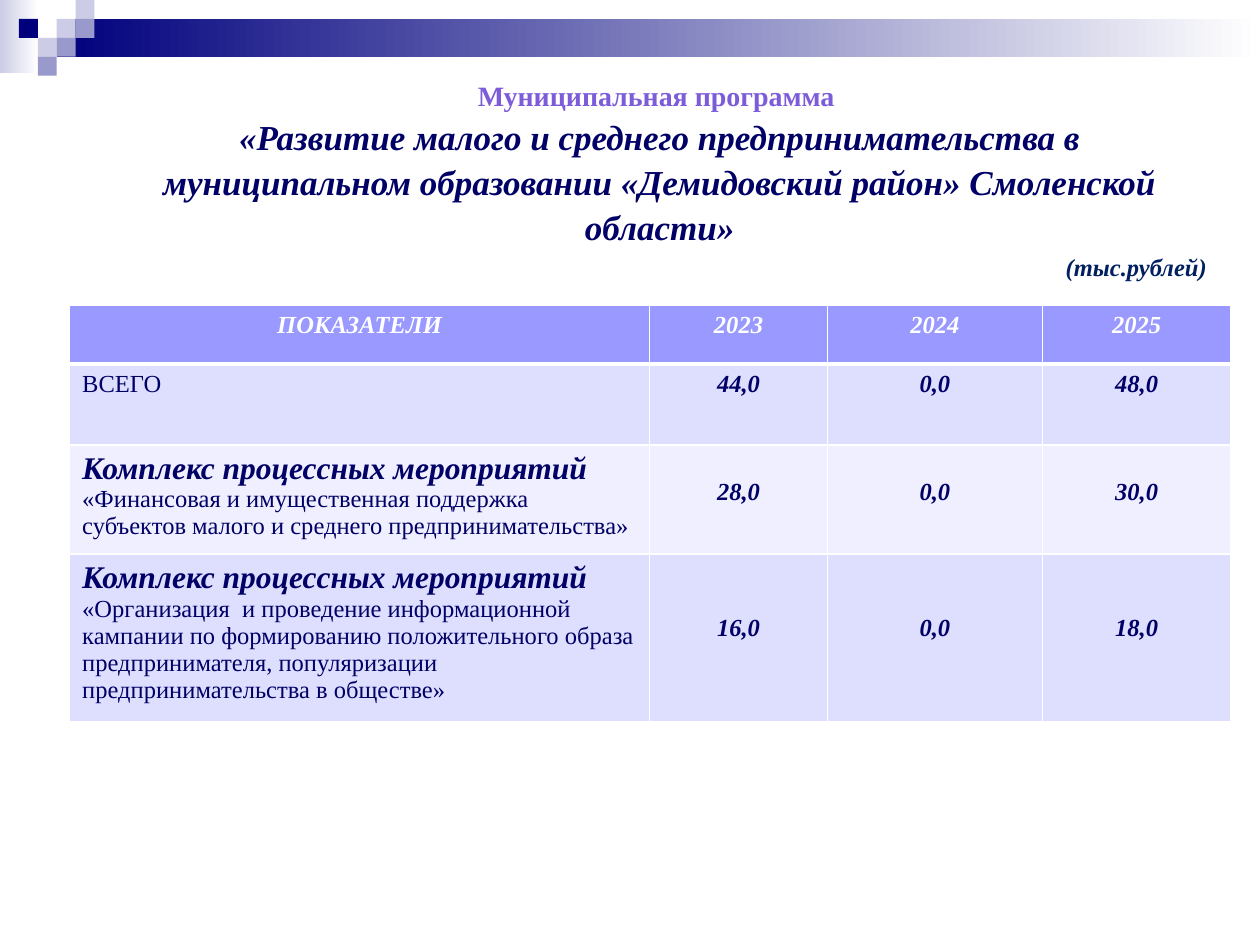
from lxml.etree import SubElement
from pptx import Presentation
from pptx.dml.color import RGBColor
from pptx.enum.shapes import MSO_SHAPE
from pptx.enum.text import MSO_ANCHOR, MSO_AUTO_SIZE, PP_ALIGN
from pptx.oxml.ns import qn
from pptx.util import Pt

COLORS = {
    "navy": "00007D", "lilac": "CCCCE6", "violet": "9999CC", "white": "FFFFFF",
    "program": "7D5CDA", "ink": "000066", "units": "002060",
    "header": "9999FF", "band": "DEDEFF", "pale": "EFEFFF",
}
FORMATS = {
    "program": {"size": Pt(16), "bold": True, "italic": False},
    "name": {"size": Pt(20), "bold": True, "italic": True},
    "strong": {"size": Pt(14), "bold": True, "italic": True},
    "measure": {"size": Pt(18), "bold": True, "italic": True},
    "plain": {"size": Pt(14), "bold": False, "italic": False},
}
STEP = 10.8
LINE = 15.5
MARGIN = 3.6


def rgb(color):
    return RGBColor.from_string(COLORS[color])


class ProgramSlide:
    font = "Times New Roman"

    def __init__(self, slide):
        self.slide = slide

    def run(self, paragraph, text, style, color):
        run = paragraph.add_run()
        run.text = text
        run.font.name = self.font
        run.font.color.rgb = rgb(color)
        for attribute, value in FORMATS[style].items():
            setattr(run.font, attribute, value)

    def block(self, left, top, width, height, *colors):
        block = self.slide.shapes.add_shape(
            MSO_SHAPE.RECTANGLE, Pt(left), Pt(top), Pt(width), Pt(height))
        block.shadow.inherit = False
        block.line.fill.background()
        if len(colors) == 1:
            block.fill.solid()
            block.fill.fore_color.rgb = rgb(colors[0])
            return
        block.fill.gradient()
        block.fill.gradient_angle = 0
        for stop, color in zip(block.fill.gradient_stops, colors):
            stop.color.rgb = rgb(color)

    def title(self, left, top, width, height, lines):
        title = self.slide.shapes.title
        title.left, title.top = Pt(left), Pt(top)
        title.width, title.height = Pt(width), Pt(height)
        frame = title.text_frame
        frame.word_wrap = True
        frame.auto_size = MSO_AUTO_SIZE.NONE
        frame.vertical_anchor = MSO_ANCHOR.TOP
        for index, line in enumerate(lines):
            paragraph = frame.add_paragraph() if index else frame.paragraphs[0]
            paragraph.alignment = PP_ALIGN.CENTER
            paragraph.line_spacing = 1.08
            paragraph.space_before = Pt(0)
            self.run(paragraph, *line)

    def label(self, left, top, width, height, text, style, color):
        label = self.slide.shapes.add_textbox(Pt(left), Pt(top), Pt(width), Pt(height))
        label.text_frame.word_wrap = False
        self.run(label.text_frame.paragraphs[0], text, style, color)

    def borders(self, cell, bottom):
        properties = cell._tc.get_or_add_tcPr()
        widths = {"a:lnL": 1, "a:lnR": 1, "a:lnT": 1, "a:lnB": bottom}
        for index, (side, width) in enumerate(widths.items()):
            line = SubElement(properties, qn(side), w=str(Pt(width)))
            fill = SubElement(line, qn("a:solidFill"))
            SubElement(fill, qn("a:srgbClr"), val=COLORS["white"])
            properties.insert(index, line)

    def cell(self, cell, runs, fill, color, centered, skipped_lines=0, bottom=1):
        cell.fill.solid()
        cell.fill.fore_color.rgb = rgb(fill)
        cell.margin_top = Pt(MARGIN + LINE * skipped_lines)
        paragraph = cell.text_frame.paragraphs[0]
        paragraph.alignment = PP_ALIGN.CENTER if centered else PP_ALIGN.LEFT
        for text, style in runs:
            self.run(paragraph, text, style, color)
        self.borders(cell, bottom)

    def table(self, left, top, widths, heights, header, rows):
        table = self.slide.shapes.add_table(
            len(heights), len(widths), Pt(left), Pt(top),
            Pt(sum(widths)), Pt(sum(heights))).table
        for column, width in zip(table.columns, widths):
            column.width = Pt(width)
        for row, height in zip(table.rows, heights):
            row.height = Pt(height)
        for column, text in enumerate(header):
            self.cell(table.cell(0, column), [(text, "strong")], "header", "white", True, bottom=3)
        for index, (indicator, values) in enumerate(rows):
            fill = "pale" if index % 2 else "band"
            self.cell(table.cell(index + 1, 0), indicator, fill, "ink", False)
            for column, value in enumerate(values, 1):
                self.cell(table.cell(index + 1, column), [(value, "strong")],
                          fill, "ink", True, skipped_lines=index)


def main():
    deck = Presentation()
    deck.slide_width, deck.slide_height = Pt(720), Pt(540)
    page = ProgramSlide(deck.slides.add_slide(deck.slide_layouts[5]))

    page.block(0, 0, 22, 42, "lilac", "white")
    page.block(3 * STEP, STEP, 720 - 3 * STEP, 2 * STEP, "navy", "white")
    mosaic = [(3, 1, "lilac"), (4, 0, "lilac"), (4, 1, "violet"), (2, 2, "lilac"),
              (1, 1, "navy"), (3, 2, "violet"), (2, 3, "violet")]
    for column, row, color in mosaic:
        page.block(column * STEP, row * STEP, STEP, STEP, color)

    page.title(56.2, 39.6, 641.5, 99.4, [
        ("Муниципальная программа ", "program", "program"),
        ("«Развитие малого и среднего предпринимательства в муниципальном "
         "образовании «Демидовский район» Смоленской области»", "name", "ink"),
    ])

    measure = ("Комплекс процессных мероприятий ", "measure")
    support = ("«Финансовая и имущественная поддержка субъектов малого и среднего "
               "предпринимательства»", "plain")
    campaign = ("«Организация  и проведение информационной кампании по формированию "
                "положительного образа предпринимателя, популяризации "
                "предпринимательства в обществе»", "plain")
    page.table(
        39.8, 174.3, [331.5, 101.5, 123, 107.5], [33.8, 46.1, 62.5, 96],
        ["ПОКАЗАТЕЛИ", "2023", "2024", "2025"],
        [([("ВСЕГО", "plain")], ["44,0", "0,0", "48,0"]),
         ([measure, support], ["28,0", "0,0", "30,0"]),
         ([measure, campaign], ["16,0", "0,0", "18,0"])])
    page.label(601.9, 140.4, 95.8, 24.5, "(тыс.рублей)", "strong", "units")

    deck.save("out.pptx")


if __name__ == "__main__":
    main()
